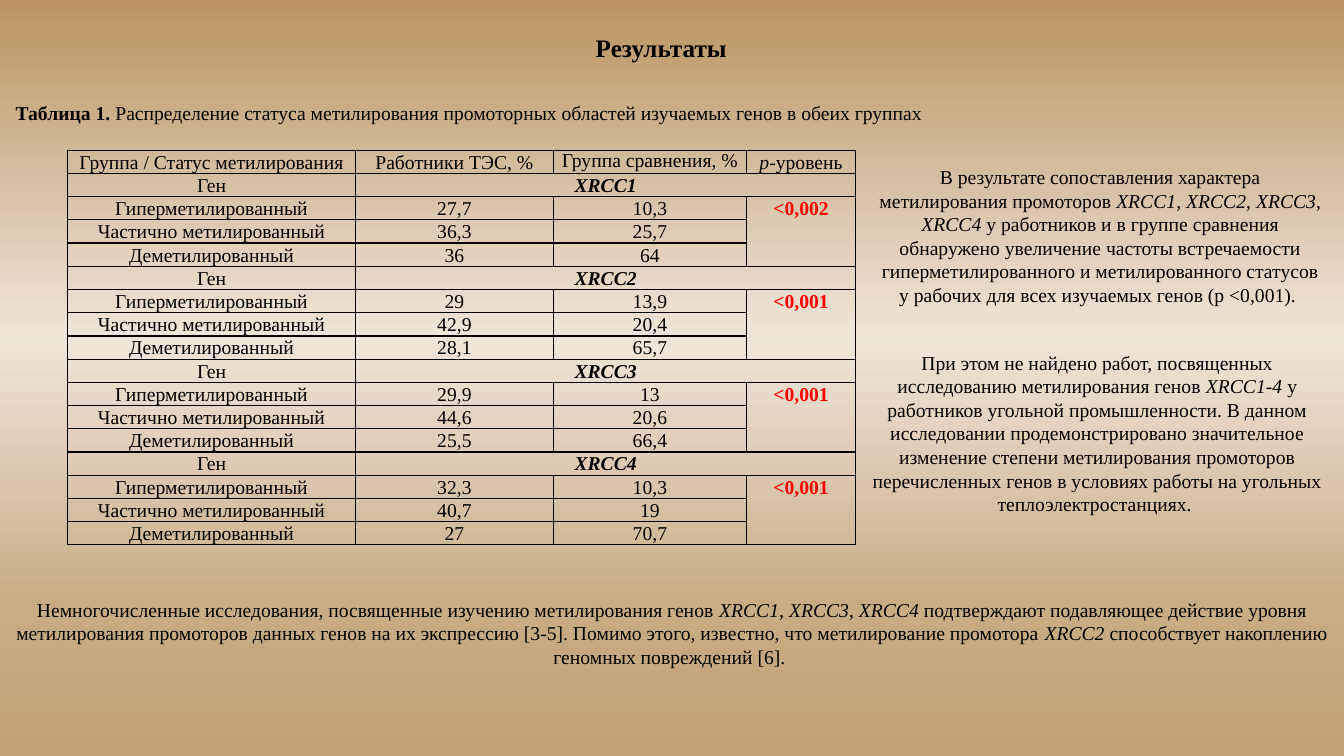
from lxml import etree
from pptx import Presentation, util as u
from pptx.dml.color import RGBColor
from pptx.enum import text
from pptx.oxml.ns import qn

# Content: a run is (text, style), where style holds "b" and/or "i"
FONT = "Times New Roman"
COLORS = {"ink": "000000", "p_value": "FF0000"}
BACKGROUND = [(0, "BA9361"), (45, "EFE6DA"), (50, "E9DDCD"), (80, "C9AB84"), (100, "C3A277")]

HEADER = [
    [("Группа / Статус метилирования", "")],
    [("Работники ТЭС, %", "")],
    [("Группа сравнения, %", "")],
    [("p", "i"), ("-уровень", "")],
]
STATUSES = ["Гиперметилированный", "Частично метилированный", "Деметилированный"]
GENES = [  # gene, p level, (workers, comparison group) for each status
    ("XRCC1", "<0,002", [("27,7", "10,3"), ("36,3", "25,7"), ("36", "64")]),
    ("XRCC2", "<0,001", [("29", "13,9"), ("42,9", "20,4"), ("28,1", "65,7")]),
    ("XRCC3", "<0,001", [("29,9", "13"), ("44,6", "20,6"), ("25,5", "66,4")]),
    ("XRCC4", "<0,001", [("32,3", "10,3"), ("40,7", "19"), ("27", "70,7")]),
]

TITLE = [("Результаты", "b")]
CAPTION = [
    ("Таблица 1. ", "b"),
    ("Распределение статуса метилирования промоторных областей изучаемых генов в обеих группах", ""),
]
COMPARISON = [
    ("В результате сопоставления характера метилирования промоторов ", ""),
    ("XRCC1", "i"), (", ", ""), ("XRCC2", "i"), (", ", ""),
    ("XRCC3", "i"), (", ", ""), ("XRCC4", "i"),
    (" у работников и в группе сравнения обнаружено увеличение частоты встречаемости "
     "гиперметилированного и метилированного статусов у рабочих для всех изучаемых "
     "генов (p <0,001). ", ""),
]
NOVELTY = [
    ("При этом не найдено работ, посвященных исследованию метилирования генов ", ""),
    ("XRCC1-4 ", "i"),
    ("у работников угольной промышленности. В данном исследовании продемонстрировано "
     "значительное изменение степени метилирования промоторов перечисленных генов в "
     "условиях работы на угольных теплоэлектростанциях. ", ""),
]
LITERATURE = [
    ("Немногочисленные исследования, посвященные изучению метилирования генов ", ""),
    ("XRCC1", "i"), (", ", ""), ("XRCC3", "i"), (", ", ""), ("XRCC4", "i"),
    (" подтверждают подавляющее действие уровня метилирования промоторов данных генов "
     "на их экспрессию [3-5]. Помимо этого, известно, что метилирование промотора ", ""),
    ("XRCC2", "i"), (" способствует накоплению геномных повреждений [6]. ", ""),
]

# Left, top, width, height in points
TOP, MIDDLE = text.MSO_ANCHOR.TOP, text.MSO_ANCHOR.MIDDLE
TEXT_BOXES = [  # runs, box, size, anchor, line spacing
    (COMPARISON, (619.2, 114.5, 333.4, 108.7), 14, TOP, 1),
    (NOVELTY, (614.9, 247, 337.7, 126), 14, TOP, 1),
    (LITERATURE, (0, 423.4, 960, 58.3), 14, TOP, 1),
    (TITLE, (395.3, 12.2, 154.1, 46.1), 18, MIDDLE, 0.9),
    (CAPTION, (-10.8, 58.3, 691.9, 46.1), 14, MIDDLE, 0.9),
]
TABLE_LEFT, TABLE_TOP, ROW_HEIGHT = 48.2, 107.3, 16.58
COLUMN_WIDTHS = [205.9, 141.1, 138.2, 77.8]


def write(frame, runs, size=14, color="ink", spacing=1.0, after=0):
    paragraph = frame.paragraphs[0]
    paragraph.alignment = text.PP_ALIGN.CENTER
    paragraph.line_spacing = spacing
    paragraph.space_after = u.Pt(after)
    for words, style in runs:
        run = paragraph.add_run()
        run.text = words
        run.font.name, run.font.size = FONT, u.Pt(size)
        run.font.bold, run.font.italic = "b" in style, "i" in style
        run.font.color.rgb = RGBColor.from_string(COLORS[color])


def add_text_box(slide, runs, box, size, anchor, spacing):
    frame = slide.shapes.add_textbox(*map(u.Pt, box)).text_frame
    frame.word_wrap = True
    frame.vertical_anchor = anchor
    write(frame, runs, size, spacing=spacing)


def set_background(slide):
    fill = slide.background.fill
    fill.gradient()
    fill.gradient_angle = 270
    stops = next(slide.element.iter(qn("a:gsLst")))
    for stop in list(stops):
        stops.remove(stop)
    for position, color in BACKGROUND:
        stop = etree.SubElement(stops, qn("a:gs"), pos=str(position * 1000))
        etree.SubElement(stop, qn("a:srgbClr"), val=color)


def format_cell(cell):
    cell.margin_left = cell.margin_right = u.Pt(5)
    cell.margin_top = cell.margin_bottom = 0
    properties = cell._tc.get_or_add_tcPr()
    for side in ("a:lnL", "a:lnR", "a:lnT", "a:lnB"):
        line = etree.SubElement(properties, qn(side), w=str(u.Pt(1)))
        fill = etree.SubElement(line, qn("a:solidFill"))
        etree.SubElement(fill, qn("a:srgbClr"), val=COLORS["ink"])
    cell.fill.background()


def add_gene_table(slide):
    block = 1 + len(STATUSES)
    row_count = 1 + block * len(GENES)
    table = slide.shapes.add_table(
        row_count, len(COLUMN_WIDTHS), u.Pt(TABLE_LEFT), u.Pt(TABLE_TOP),
        u.Pt(sum(COLUMN_WIDTHS)), u.Pt(ROW_HEIGHT * row_count)).table
    table.first_row = table.horz_banding = False
    for column, width in zip(table.columns, COLUMN_WIDTHS):
        column.width = u.Pt(width)
    for row in table.rows:
        row.height = u.Pt(ROW_HEIGHT)
    for cell in table.iter_cells():
        format_cell(cell)

    def put(row, column, runs, color="ink", spacing=1.07, after=8):
        write(table.cell(row, column).text_frame, runs, 14, color, spacing, after)

    # Header: the comparison group is set with single spacing
    for column, runs in enumerate(HEADER):
        put(0, column, runs, spacing=1.0 if column == 2 else 1.07, after=0 if column == 2 else 8)

    # One block for each gene: name row, then the statuses
    for index, (gene, p_level, shares) in enumerate(GENES):
        top = 1 + index * block
        table.cell(top, 1).merge(table.cell(top, 3))
        table.cell(top + 1, 3).merge(table.cell(top + len(STATUSES), 3))
        put(top, 0, [("Ген", "")])
        put(top, 1, [(gene, "bi")])
        put(top + 1, 3, [(p_level, "b")], "p_value")
        for row, (status, pair) in enumerate(zip(STATUSES, shares), top + 1):
            for column, value in enumerate((status, *pair)):
                put(row, column, [(value, "")])


def main():
    presentation = Presentation()
    presentation.slide_width, presentation.slide_height = u.Pt(960), u.Pt(540)
    slide = presentation.slides.add_slide(presentation.slide_layouts[6])
    set_background(slide)
    add_gene_table(slide)
    for text_box in TEXT_BOXES:
        add_text_box(slide, *text_box)
    presentation.save("out.pptx")


if __name__ == "__main__":
    main()
